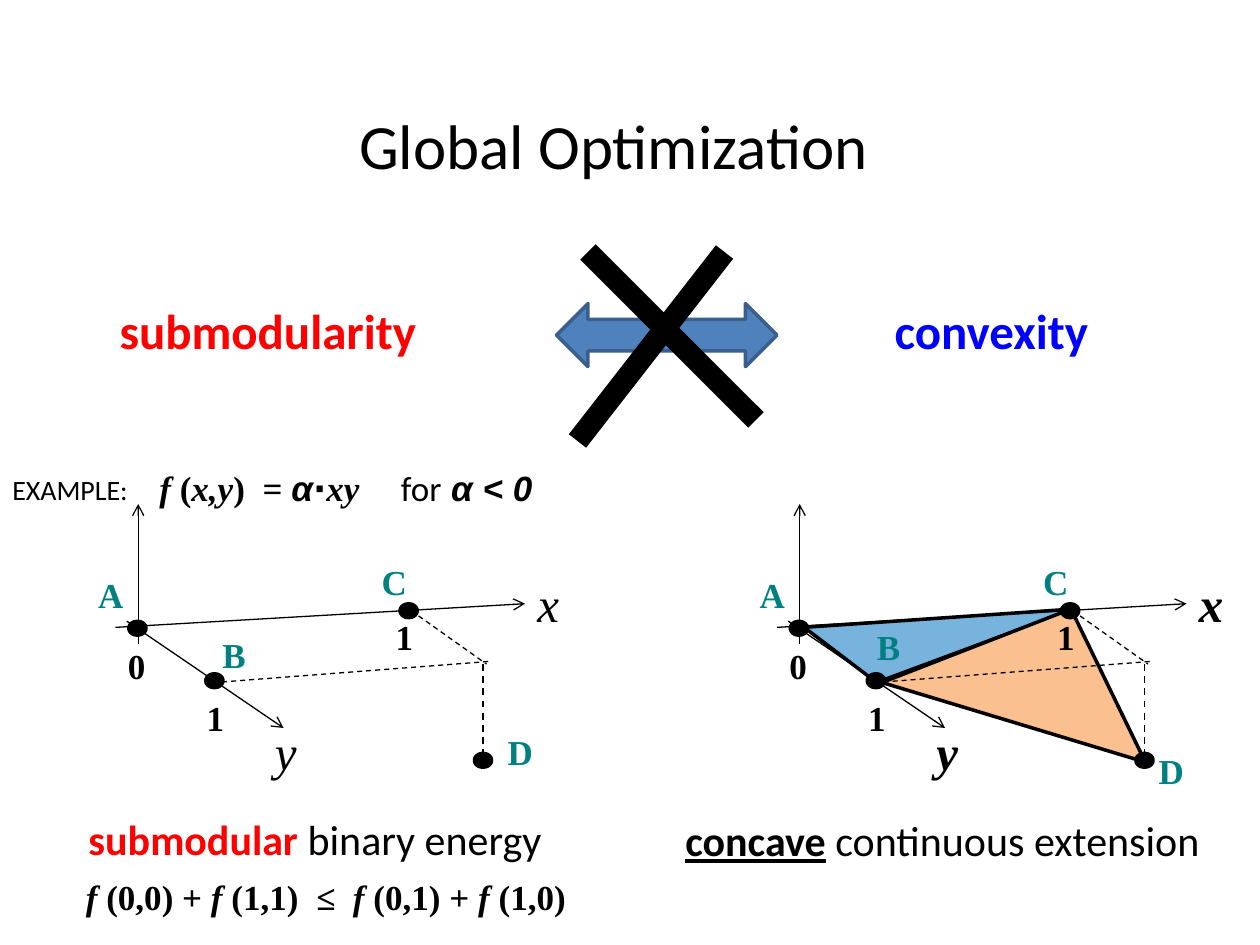
from lxml import etree
from pptx import Presentation
from pptx import util as u
from pptx.dml.color import RGBColor
from pptx.enum import dml, shapes, text
from pptx.oxml.ns import qn

COLORS = {"black": "000000", "red": "FF0000", "blue": "0000FF", "teal": "008080",
          "cyan": "00FFFF", "arrow": "4F81BD", "arrow edge": "3A5F8C",
          "sky": "0070C0", "peach": "FAC090"}
SERIF, SANS = "Times New Roman", "Calibri"
PANEL_SHIFT = 378


class Sketch:
    """Draws styled elements on one slide, with all lengths in points."""

    def __init__(self, deck):
        self.page = deck.slides.add_slide(deck.slide_layouts[5])

    def color(self, name):
        return RGBColor.from_string(COLORS[name])

    def style(self, font, size=None, face=None, color=None, marks=None):
        if size:
            font.size = u.Pt(size)
        if face:
            font.name = face
        if color:
            font.color.rgb = self.color(color)
        if marks is not None:
            font.bold, font.italic, font.underline = ("b" in marks, "i" in marks, "u" in marks)

    def set_text(self, box, runs, size, face, color="black", marks="", align="LEFT", wrap=True):
        frame = box.text_frame
        frame.word_wrap = wrap
        frame.auto_size = text.MSO_AUTO_SIZE.NONE
        para = frame.paragraphs[0]
        para.alignment = getattr(text.PP_ALIGN, align)
        self.style(para.font, size, face, color, marks)
        for words, changes in runs:
            span = para.add_run()
            span.text = words
            self.style(span.font, **changes)

    def title(self, words, left, top, width, height, size):
        box = self.page.shapes.title
        box.left, box.top, box.width, box.height = map(u.Pt, (left, top, width, height))
        self.set_text(box, [(words, {})], size, SANS, wrap=False)

    def label(self, runs, left, top, width, height, size, face, **look):
        box = self.page.shapes.add_textbox(*map(u.Pt, (left, top, width, height)))
        self.set_text(box, [(runs, {})] if isinstance(runs, str) else runs, size, face, **look)

    def line(self, start, end, width=0.75, dash=False, arrow=False):
        link = self.page.shapes.add_connector(
            shapes.MSO_CONNECTOR.STRAIGHT, *map(u.Pt, (*start, *end)))
        link.line.width = u.Pt(width)
        link.line.color.rgb = self.color("black")
        if dash:
            link.line.dash_style = dml.MSO_LINE.DASH
        properties = link._element.spPr
        if arrow:
            etree.SubElement(properties.find(qn("a:ln")), qn("a:tailEnd"), type="arrow")
        etree.SubElement(properties, qn("a:effectLst"))

    def paint(self, shape, fill, edge, width, opacity=None):
        shape.shadow.inherit = False
        shape.fill.solid()
        shape.fill.fore_color.rgb = self.color(fill)
        shape.line.color.rgb = self.color(edge)
        shape.line.width = u.Pt(width)
        if opacity:
            tone = shape._element.spPr.find(qn("a:solidFill"))[0]
            etree.SubElement(tone, qn("a:alpha"), val=str(opacity * 1000))

    def preset(self, kind, left, top, width, height, fill, edge, line_width):
        shape = self.page.shapes.add_shape(kind, *map(u.Pt, (left, top, width, height)))
        self.paint(shape, fill, edge, line_width)

    def polygon(self, points, fill, opacity=None):
        first, *others = [(u.Pt(x), u.Pt(y)) for x, y in points]
        builder = self.page.shapes.build_freeform(*first)
        builder.add_line_segments(others, close=True)
        self.paint(builder.convert_to_shape(), fill, "black", 2, opacity)

    def graph(self, shift, names, axis_marks):
        """Draws the axes, the corner dots and their labels."""
        axes = [((66, 358.5), (300, 345)), ((72.5, 355), (162, 416)), ((79, 368), (79, 288))]
        guides = [((279, 378), (123, 390), 0.75), ((235, 349), (278, 379.5), 0.75),
                  ((276, 379.5), (276, 438), 1)]
        for (x1, y1), (x2, y2) in axes:
            self.line((x1 + shift, y1), (x2 + shift, y2), arrow=True)
        for (x1, y1), (x2, y2), width in guides:
            self.line((x1 + shift, y1), (x2 + shift, y2), width, dash=True)
        for x, y in [(75, 356.5), (119, 386.5), (230, 346.5), (272.5, 432)]:
            self.preset(shapes.MSO_SHAPE.OVAL, x + shift, y, 7, 5, "cyan", "black", 5)
        for number, x, y in [("0", 66, 364.5), ("1", 219, 348), ("1", 111, 394.5)]:
            self.label(number, x + shift, y, 15, 32, 20, SERIF, marks="b")
        for name, x, y in [("y", 150, 408.5), ("x", 300, 324)]:
            self.label(name, x + shift, y, 17, 41, 28, SERIF, marks=axis_marks)
        for name, (x, y) in names.items():
            self.label(name, x + shift, y, 29.5, 32, 20, SERIF, color="teal", marks="b")


def main():
    deck = Presentation()
    deck.slide_width, deck.slide_height = u.Pt(720), u.Pt(540)
    sketch = Sketch(deck)
    sketch.title("Global Optimization", 198, 57, 308, 51, 36)
    sketch.label("submodularity", 60, 168, 186, 42, 28, SANS,
                 color="red", marks="b", align="CENTER", wrap=False)
    sketch.label("convexity", 503, 168, 127, 42, 28, SANS,
                 color="blue", marks="b", align="CENTER", wrap=False)
    sketch.preset(shapes.MSO_SHAPE.LEFT_RIGHT_ARROW, 318, 173.5, 126, 36,
                  "arrow", "arrow edge", 2)
    sketch.line((336, 144), (432, 240), 12.5)
    sketch.line((414, 144), (330, 252), 12.5)

    upright, slanted = {"marks": "b"}, {"marks": "bi"}
    sketch.label("EXAMPLE:", 0, 266.5, 83, 27, 16, SANS, wrap=False)
    sketch.label([("f ", slanted), ("(", upright), ("x,y", slanted), (")", upright),
                  ("  = ", slanted), ("α", {"face": "Arial", **slanted}),
                  ("∙", {"face": SANS, **upright}), ("xy", slanted)],
                 84, 263, 198, 32, 20, SERIF)
    sketch.label([("for", {}), (" α < 0", {"face": "Arial", **slanted})],
                 222, 263, 114, 32, 20, SANS)

    corners = {"A": (49, 324), "B": (120, 358.5), "C": (211, 317), "D": (283, 414)}
    sketch.graph(0, corners, "i")
    for points, fill, opacity in [
            ([(81.5, 358.5), (236, 348), (123, 390)], "sky", 53),
            ([(126, 390), (234, 348), (276.5, 435.5)], "peach", None)]:
        sketch.polygon([(x + PANEL_SHIFT, y) for x, y in points], fill, opacity)
    sketch.graph(PANEL_SHIFT, {**corners, "B": (116, 354), "D": (277, 425)}, "bi")

    sketch.label([("submodular ", {"color": "red", **upright}), ("binary energy", {})],
                 42, 461.5, 276, 36, 24, SANS, align="CENTER", wrap=False)
    sketch.label([("concave", {"marks": "bu"}), (" ", upright), ("continuous extension", {})],
                 384.5, 462, 311, 36, 24, SANS, wrap=False)
    sketch.label([("f ", slanted), ("(0,0) +", upright), (" f ", slanted), ("(1,1)", upright),
                  ("  ≤  f ", slanted), ("(0,1) +", upright), (" f ", slanted),
                  ("(1,0)", upright)], 42, 497, 294, 32, 20, SERIF)
    deck.save("out.pptx")


if __name__ == "__main__":
    main()
